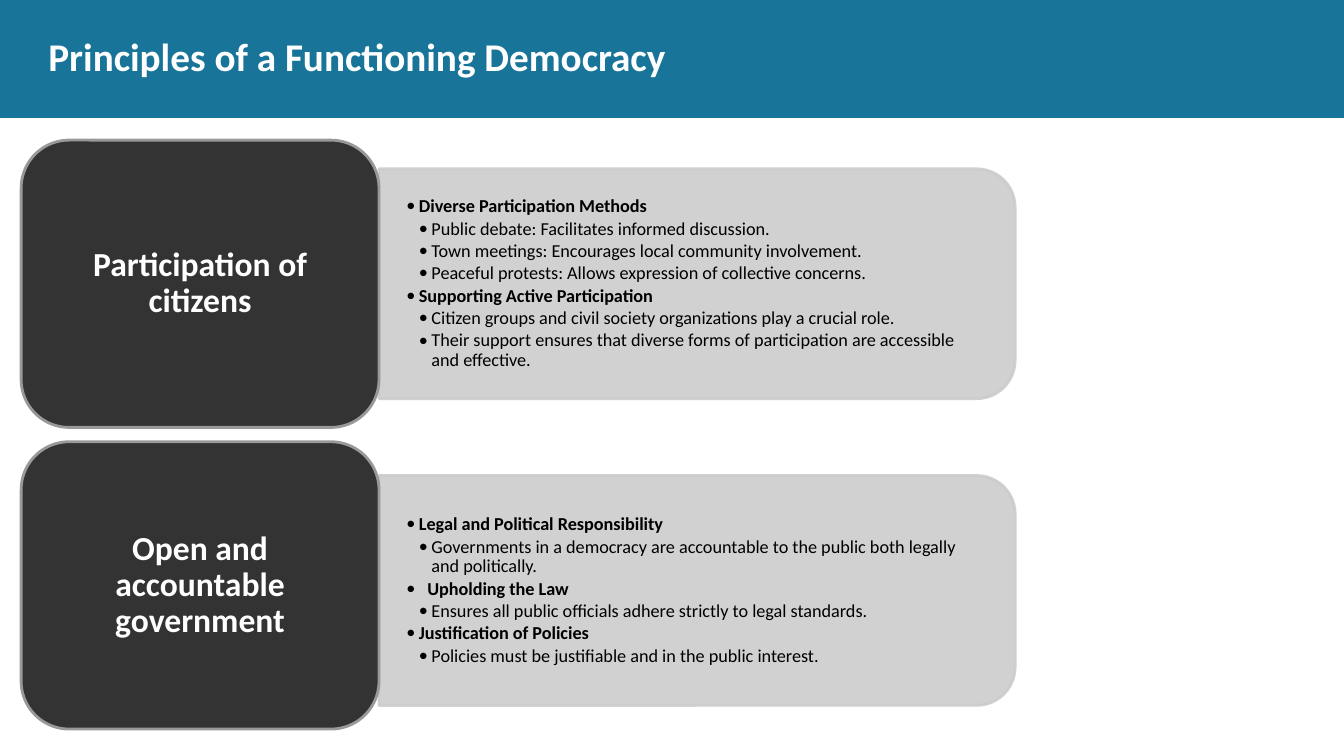
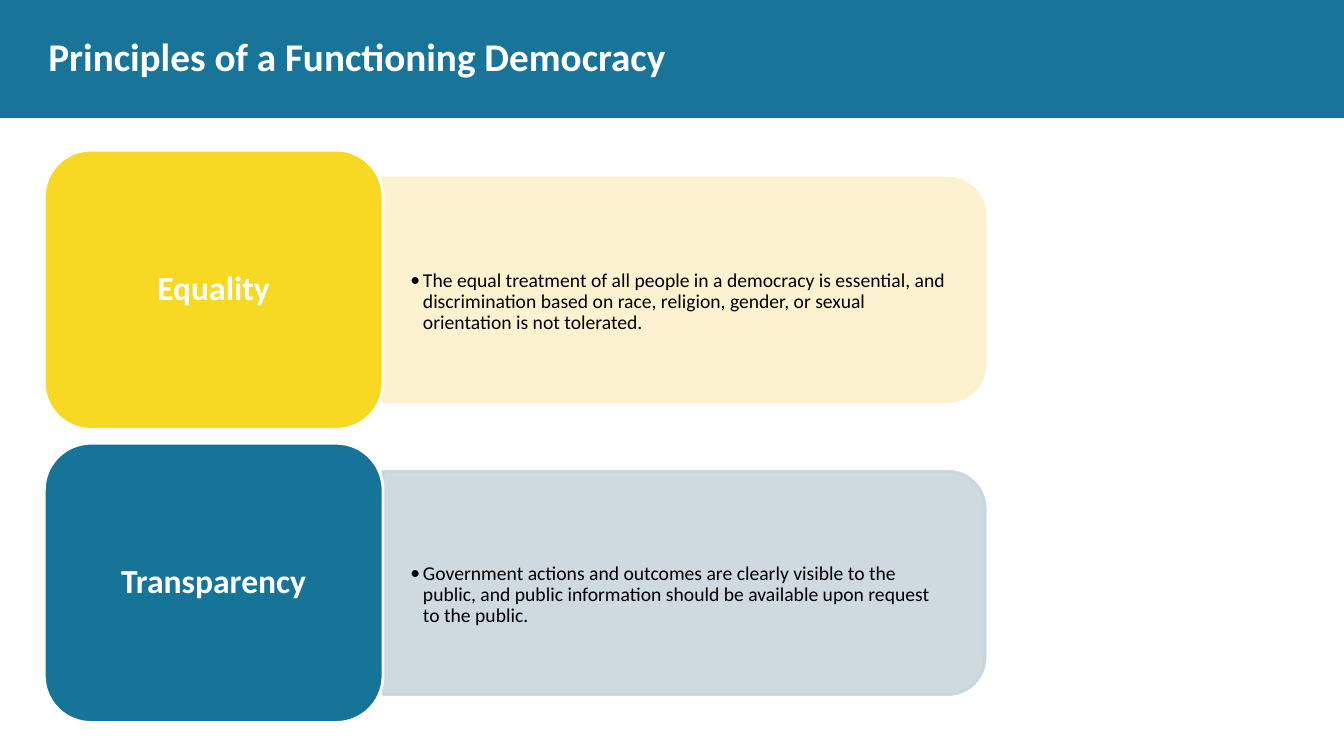
from lxml.etree import SubElement as Sub
from pptx import Presentation
from pptx.dml.color import RGBColor as RGB
from pptx.enum.shapes import MSO_SHAPE as Kind
from pptx.enum.text import MSO_ANCHOR as Anchor, MSO_AUTO_SIZE as Fit, PP_ALIGN as Align
from pptx.oxml.ns import qn
from pptx.util import Pt

FONT = "Calibri"
WHITE, BLACK = RGB(255, 255, 255), RGB(0, 0, 0)
BAND = RGB(0x18, 0x74, 0x98)
DARK, MID, PALE = RGB(0x33, 0x33, 0x33), RGB(0x99, 0x99, 0x99), RGB(0xCC, 0xCC, 0xCC)
GOLD, CREAM = RGB(0xF7, 0xD8, 0x22), RGB(0xFD, 0xF1, 0xCB)
TEAL, MIST = RGB(0x15, 0x74, 0x98), RGB(0xC9, 0xD5, 0xDD)

WIDE, HIGH, BAND_H = 960, 540, 84.24
TITLE = "Principles of a Functioning Democracy"
ROUND = 0.167    # corner size of labels and panels
INSET = 8        # list box to panel edge

# Each item: level, text, extra text indent
CITIZENS = [
    (0, "Diverse Participation Methods", 0),
    (1, "Public debate: Facilitates informed discussion.", 0),
    (1, "Town meetings: Encourages local community involvement.", 0),
    (1, "Peaceful protests: Allows expression of collective concerns.", 0),
    (0, "Supporting Active Participation", 0),
    (1, "Citizen groups and civil society organizations play a crucial role.", 0),
    (1, "Their support ensures that diverse forms of participation are "
        "accessible and effective.", 0),
]
OPEN = [
    (0, "Legal and Political Responsibility", 0),
    (1, "Governments in a democracy are accountable to the public both "
        "legally and politically.", 0),
    (0, "Upholding the Law", 6),
    (1, "Ensures all public officials adhere strictly to legal standards.", 0),
    (0, "Justification of Policies", 0),
    (1, "Policies must be justifiable and in the public interest.", 0),
]
EQUAL = [(0, "The equal treatment of all people in a democracy is essential, and "
             "discrimination based on race, religion, gender, or sexual "
             "orientation is not tolerated.", 0)]
CLEAR = [(0, "Government actions and outcomes are clearly visible to the public, "
             "and public information should be available upon request to the "
             "public.", 0)]

# Each row: label, items, label fill, label line, panel fill, panel drop
SLIDES = [
    dict(box=(15.1, 100.1, 255.6, 205.2), size=13, lead=0, bold=True, rows=[
        ("Participation of citizens", CITIZENS, DARK, MID, PALE, 0),
        ("Open and accountable government", OPEN, DARK, MID, PALE, 3.6)]),
    dict(box=(31.7, 107.3, 241.9, 199.4), size=14, lead=17.5, bold=False, rows=[
        ("Equality", EQUAL, GOLD, WHITE, CREAM, 0),
        ("Transparency", CLEAR, TEAL, WHITE, MIST, 0)]),
]


def apply(thing, **values):
    for name, value in values.items():
        setattr(thing, name, value)


def place(shape, left, top, width, height):
    apply(shape, left=Pt(left), top=Pt(top), width=Pt(width), height=Pt(height))


def pad(frame, left, top, right, bottom):
    apply(frame, margin_left=Pt(left), margin_top=Pt(top), margin_right=Pt(right),
          margin_bottom=Pt(bottom), vertical_anchor=Anchor.MIDDLE,
          word_wrap=True, auto_size=Fit.NONE)


def write(para, text, size, color, bold):
    run = para.add_run()
    run.text = text
    apply(run.font, name=FONT, size=Pt(size), bold=bold)
    run.font.color.rgb = color


def add_block(slide, kind, box, fill, line=None):
    shape = slide.shapes.add_shape(kind, *map(Pt, box))
    shape.shadow.inherit = False
    shape.fill.solid()
    shape.fill.fore_color.rgb = fill
    if line is None:
        shape.line.fill.background()
    else:
        shape.line.color.rgb = line
        shape.line.width = Pt(2)
    return shape


def add_panel(slide, box, fill):
    """Box rounded on its right side: a turned shape with a round top."""
    left, top, width, height = box
    turned = (left + (width - height) / 2, top + (height - width) / 2, height, width)
    panel = add_block(slide, Kind.ROUND_2_SAME_RECTANGLE, turned, fill, fill)
    panel.rotation = 90
    panel.adjustments[0], panel.adjustments[1] = ROUND, 0
    for color in panel.element.spPr.iter(qn("a:srgbClr")):
        Sub(color, qn("a:alpha"), val="90000")


def fill_list(slide, holder, box, items, size, lead, bold):
    left, top, width, height = box
    place(holder, left, top + INSET, width - INSET, height - 2 * INSET)
    slide.shapes.element.append(holder.element)    # bring to front
    frame = holder.text_frame
    pad(frame, 19.5, 10 + lead, 19.5, 10)
    for i, (level, text, extra) in enumerate(items):
        para = frame.add_paragraph() if i else frame.paragraphs[0]
        apply(para, level=level, line_spacing=0.9, alignment=Align.LEFT,
              space_before=Pt(1.9 if i else 0), space_after=Pt(0))
        props = para._p.get_or_add_pPr()
        props.set("marL", str(Pt(9 * (level + 1) + extra)))
        props.set("indent", str(-Pt(9 + extra)))
        Sub(props, qn("a:buFont"), typeface=FONT)
        Sub(props, qn("a:buChar"), char="•")
        write(para, text, size, BLACK, bold and level == 0)


def add_label(slide, box, text, fill, line):
    label = add_block(slide, Kind.ROUNDED_RECTANGLE, box, fill, line)
    label.adjustments[0] = ROUND
    pad(label.text_frame, 7.2, 3.6, 7.2, 3.6)
    para = label.text_frame.paragraphs[0]
    apply(para, alignment=Align.CENTER, line_spacing=0.9)
    write(para, text, 24, WHITE, True)


def add_row(slide, holder, box, row, style):
    text, items, fill, line, pale, drop = row
    left, top, width, height = box
    panel = (left + width, top + height * 0.1 + drop, width * 16 / 9, height * 0.8)
    add_panel(slide, panel, pale)
    fill_list(slide, holder, panel, items, **style)
    add_label(slide, box, text, fill, line)


def add_slide(deck, layout, box, rows, **style):
    slide = deck.slides.add_slide(layout)
    para = slide.shapes.title.text_frame.paragraphs[0]
    para.alignment = Align.LEFT
    write(para, TITLE, 28, WHITE, True)
    left, top, width, height = box
    for i, row in enumerate(rows):
        spot = (left, top + i * height * 1.05, width, height)
        add_row(slide, slide.placeholders[i + 1], spot, row, style)
    return slide


def set_layout(layout, slide):
    """Give the layout the shared band and title box."""
    band = add_block(slide, Kind.RECTANGLE, (0, 0, WIDE, BAND_H), BAND)
    layout.shapes.element.insert(2, band.element)
    title = layout.placeholders[0]
    place(title, 34.6, 13, 897, 53.3)
    pad(title.text_frame, 0, 0, 0, 0)


def main():
    deck = Presentation()
    apply(deck, slide_width=Pt(WIDE), slide_height=Pt(HIGH))
    layout = deck.slide_layouts[3]    # title and two lists
    for page in SLIDES:
        slide = add_slide(deck, layout, **page)
    set_layout(layout, slide)
    deck.save("out.pptx")


if __name__ == "__main__":
    main()
